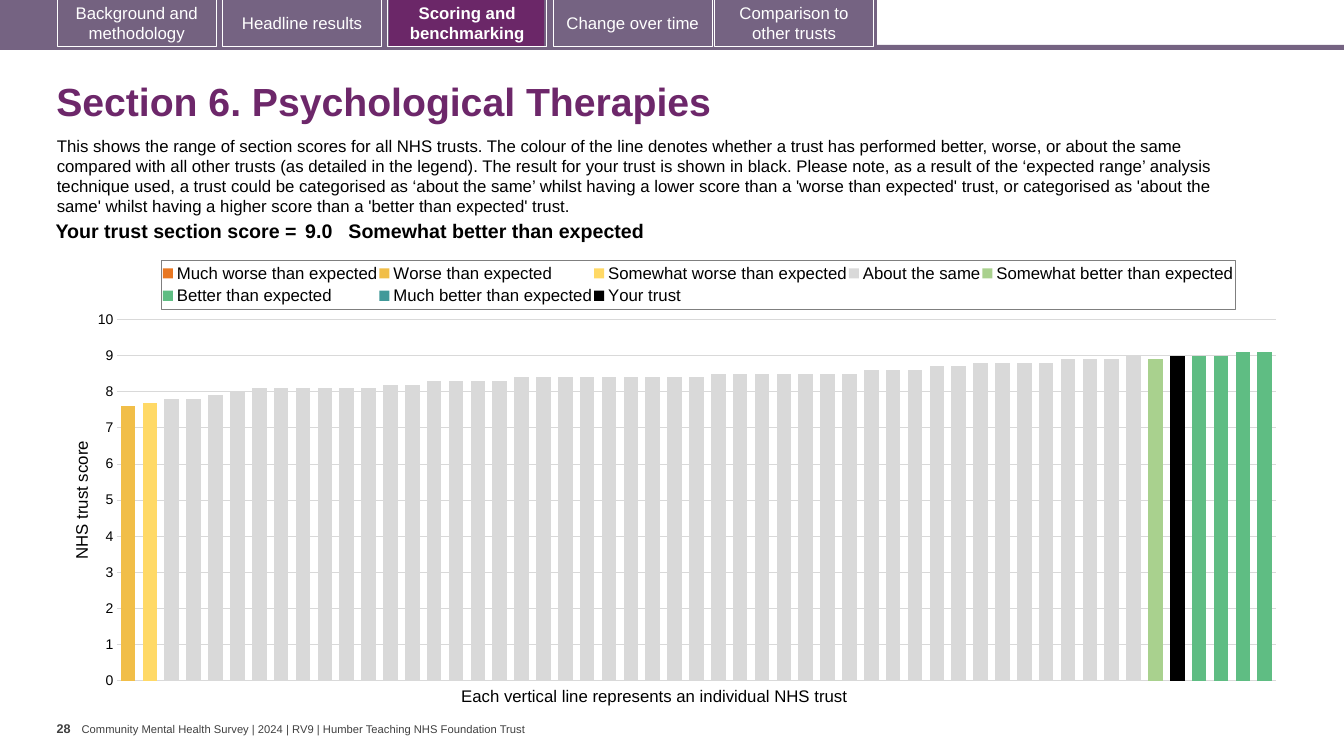
from copy import deepcopy
from lxml.etree import fromstring
from pptx import Presentation
from pptx.chart.axis import ValueAxis
from pptx.chart.data import CategoryChartData as ChartData
from pptx.dml.color import RGBColor
from pptx.enum.chart import XL_CHART_TYPE as KIND, XL_LEGEND_POSITION as SIDE
from pptx.enum.chart import XL_TICK_LABEL_POSITION as LABEL, XL_TICK_MARK as TICK
from pptx.enum.shapes import MSO_SHAPE as SHAPE
from pptx.enum.text import MSO_ANCHOR as ANCHOR, PP_ALIGN as ALIGN
from pptx.oxml.ns import nsdecls, qn
from pptx.util import Pt

BLACK = RGBColor(0, 0, 0)
WHITE = RGBColor(255, 255, 255)
DARK = RGBColor(0x40, 0x40, 0x40)
GREY = RGBColor(0x59, 0x59, 0x59)
BAND = RGBColor(0x75, 0x63, 0x82)
MAUVE = RGBColor(0x74, 0x62, 0x80)
PLUM = RGBColor(0x6B, 0x27, 0x68)
HEAD = RGBColor(0x6D, 0x27, 0x6A)
GRID = RGBColor(0xD9, 0xD9, 0xD9)
FONT = "Arial"


def write(frame, text, size, color, bold=False, align=ALIGN.LEFT):
    par = frame.paragraphs[0]
    par.alignment = align
    run = par.add_run()
    run.text = text
    run.font.name = FONT
    run.font.size = Pt(size)
    run.font.bold = bold
    run.font.color.rgb = color
    return par


def place(x, y, w, h):
    return fromstring(
        f'<c:layout {nsdecls("c")}><c:manualLayout>'
        '<c:layoutTarget val="inner"/><c:xMode val="edge"/><c:yMode val="edge"/>'
        f'<c:x val="{x}"/><c:y val="{y}"/><c:w val="{w}"/><c:h val="{h}"/>'
        '</c:manualLayout></c:layout>')


deck = Presentation()
deck.slide_width, deck.slide_height = Pt(960), Pt(540)
slide = deck.slides.add_slide(deck.slide_layouts[6])
shapes = slide.shapes

bars = [
    (0, 32, 960, 3.6, BAND),
    (0, 0, 626.4, 33.8, BAND),
    (42.5, 0, 110.9, 33.1, MAUVE),
    (277.9, 0, 110.9, 33.1, PLUM),
]
for x, y, w, h, color in bars:
    bar = shapes.add_shape(SHAPE.RECTANGLE, Pt(x), Pt(y), Pt(w), Pt(h))
    bar.shadow.inherit = False
    bar.fill.solid()
    bar.fill.fore_color.rgb = color
    bar.line.fill.background()

tabs = [
    (41, "Background and methodology", MAUVE),
    (159.1, "Headline results", None),
    (277, "Scoring and benchmarking", None),
    (395.3, "Change over time", BAND),
    (510.5, "Comparison to other trusts", BAND),
]
for x, text, color in tabs:
    tab = shapes.add_shape(SHAPE.RECTANGLE, Pt(x), Pt(-0.7), Pt(113.4), Pt(33.8))
    tab.shadow.inherit = False
    if color:
        tab.fill.solid()
        tab.fill.fore_color.rgb = color
    else:
        tab.fill.background()
    tab.line.color.rgb = WHITE
    tab.line.width = Pt(0.75)
    tab.text_frame.vertical_anchor = ANCHOR.MIDDLE
    write(tab.text_frame, text, 12, WHITE, text.startswith("Scoring"), ALIGN.CENTER)

about = (
    "This shows the range of section scores for all NHS trusts. The colour of the line denotes "
    "whether a trust has performed better, worse, or about the same compared with all other trusts "
    "(as detailed in the legend). The result for your trust is shown in black. Please note, as a "
    "result of the ‘expected range’ analysis technique used, a trust could be categorised as "
    "‘about the same’ whilst having a lower score than a 'worse than expected' trust, or "
    "categorised as 'about the same' whilst having a higher score than a 'better than expected' trust.")
foot = "Community Mental Health Survey | 2024 | RV9 | Humber Teaching NHS Foundation Trust"
note = "Each vertical line represents an individual NHS trust"
MID, TOP = ANCHOR.MIDDLE, ANCHOR.TOP
texts = [
    (58.3, 515.8, 322.6, 9.4, foot, 8, DARK, False, MID, 0, 0, False),
    (33.1, 48.2, 899.3, 51.8, "Section 6. Psychological Therapies", 28, HEAD, True, MID, 7.2, 3.6, True),
    (40.5, 511.4, 18, 28.8, "28", 9, DARK, True, TOP, 0, 3.6, False),
    (33.5, 93.3, 873.4, 65.5, about, 12, BLACK, False, TOP, 7.2, 3.6, True),
    (322.3, 486, 295.9, 21.6, note, 12, BLACK, False, TOP, 7.2, 3.6, False),
]
for x, y, w, h, text, size, color, bold, anchor, side, edge, wrap in texts:
    frame = shapes.add_textbox(Pt(x), Pt(y), Pt(w), Pt(h)).text_frame
    frame.word_wrap = wrap
    frame.vertical_anchor = anchor
    frame.margin_left = frame.margin_right = Pt(side)
    frame.margin_top = frame.margin_bottom = Pt(edge)
    par = write(frame, text, size, color, bold)
    if size == 28:
        par.line_spacing = 0.9

COUNT = 53
same = [(7.8, 2), (7.9, 1), (8, 1), (8.1, 6), (8.2, 2), (8.3, 4), (8.4, 9),
        (8.5, 7), (8.6, 3), (8.7, 2), (8.8, 4), (8.9, 3), (9, 1)]
groups = [
    ("Much worse than expected", 0, [], RGBColor(0xE8, 0x77, 0x22)),
    ("Worse than expected", 0, [7.6], RGBColor(0xF1, 0xBE, 0x48)),
    ("Somewhat worse than expected", 1, [7.7], RGBColor(0xFF, 0xD9, 0x66)),
    ("About the same", 2, [score for score, n in same for _ in range(n)], GRID),
    ("Somewhat better than expected", 47, [8.9, 9], RGBColor(0xA9, 0xD1, 0x8E)),
    ("Better than expected", 49, [9, 9, 9.1, 9.1], RGBColor(0x5F, 0xBD, 0x83)),
    ("Much better than expected", 0, [], RGBColor(0x41, 0x99, 0x99)),
    ("Your trust", 48, [9], BLACK),
]
data = ChartData()
data.categories = [str(i) for i in range(1, COUNT + 1)]
for name, start, scores, _ in groups:
    data.add_series(name, [None] * start + scores + [None] * (COUNT - start - len(scores)))

chart = shapes.add_chart(KIND.COLUMN_CLUSTERED, Pt(48.7), Pt(177.8), Pt(874.8), Pt(319.5), data).chart
chart.has_title = False
chart.font.name = "Calibri"
chart.font.size = Pt(10)
chart.font.color.rgb = BLACK
plot = chart.plots[0]
plot.gap_width, plot.overlap, plot.vary_by_categories = 50, 100, False
for series, group in zip(plot.series, groups):
    series.format.fill.solid()
    series.format.fill.fore_color.rgb = group[3]
    series.invert_if_negative = False

chart.category_axis.visible = False
axis = chart.value_axis
axis.minimum_scale, axis.maximum_scale, axis.major_unit = 0, 10, 1
axis.major_tick_mark = axis.minor_tick_mark = TICK.NONE
axis.format.line.fill.background()
axis.major_gridlines.format.line.color.rgb = GRID
axis.major_gridlines.format.line.width = Pt(0.75)
labels = axis.tick_labels
labels.number_format, labels.number_format_is_linked = "0", False
labels.font.name, labels.font.size = FONT, Pt(10)
labels.font.color.rgb = BLACK
write(axis.axis_title.text_frame, "NHS trust score", 12, BLACK)

area = chart._chartSpace.find(".//" + qn("c:plotArea"))
first, base, scale = (area.find(qn(tag)) for tag in ("c:barChart", "c:catAx", "c:valAx"))
second, floor, right = deepcopy(first), deepcopy(base), deepcopy(scale)
for ser in second.findall(qn("c:ser"))[:-1]:
    second.remove(ser)
first.remove(first.findall(qn("c:ser"))[-1])
first.addnext(second)
scale.addnext(right)
right.addnext(floor)
for node, value in zip(second.findall(qn("c:axId")), ("501", "502")):
    node.set("val", value)
for item, own, other in ((floor, "501", "502"), (right, "502", "501")):
    item.find(qn("c:axId")).set("val", own)
    item.find(qn("c:crossAx")).set("val", other)
right.find(qn("c:axPos")).set("val", "r")
right.find(qn("c:crosses")).set("val", "max")
twin = ValueAxis(right)
twin.has_title = twin.has_major_gridlines = False
twin.major_tick_mark, twin.tick_label_position = TICK.OUTSIDE, LABEL.NONE
twin.tick_labels.font.name, twin.tick_labels.font.size = "Calibri", Pt(12)
twin.tick_labels.font.color.rgb = GREY

chart.has_legend = True
legend = chart.legend
legend.position, legend.include_in_layout = SIDE.TOP, False
legend.font.name, legend.font.size = FONT, Pt(12)
legend.font.color.rgb = BLACK
key = legend._element
for part in (area, key):
    for old in part.findall(qn("c:layout")):
        part.remove(old)
area.insert(0, place(0.04, 0.158, 0.946, 0.808))
over = key.find(qn("c:overlay"))
over.addprevious(place(0.076, 0.025, 0.877, 0.11))
over.addnext(fromstring(
    f'<c:spPr {nsdecls("c", "a")}><a:ln w="9525"><a:solidFill>'
    '<a:srgbClr val="7F7F7F"/></a:solidFill></a:ln></c:spPr>'))

table = shapes.add_table(1, 3, Pt(25.7), Pt(154.8), Pt(841.7), Pt(22.3)).table
table.first_row = table.horz_banding = False
table.rows[0].height = Pt(15.8)
cells = [
    (189.4, "Your trust section score =", 2.9, ALIGN.RIGHT),
    (33.8, "9.0", 2.9, ALIGN.LEFT),
    (618.5, "Somewhat better than expected", 0, ALIGN.LEFT),
]
for i, (width, text, side, align) in enumerate(cells):
    table.columns[i].width = Pt(width)
    cell = table.cell(0, i)
    cell.fill.background()
    cell.margin_left = cell.margin_right = Pt(side)
    cell.margin_top = cell.margin_bottom = Pt(2.9)
    write(cell.text_frame, text, 14, BLACK, True, align)

deck.save("out.pptx")
